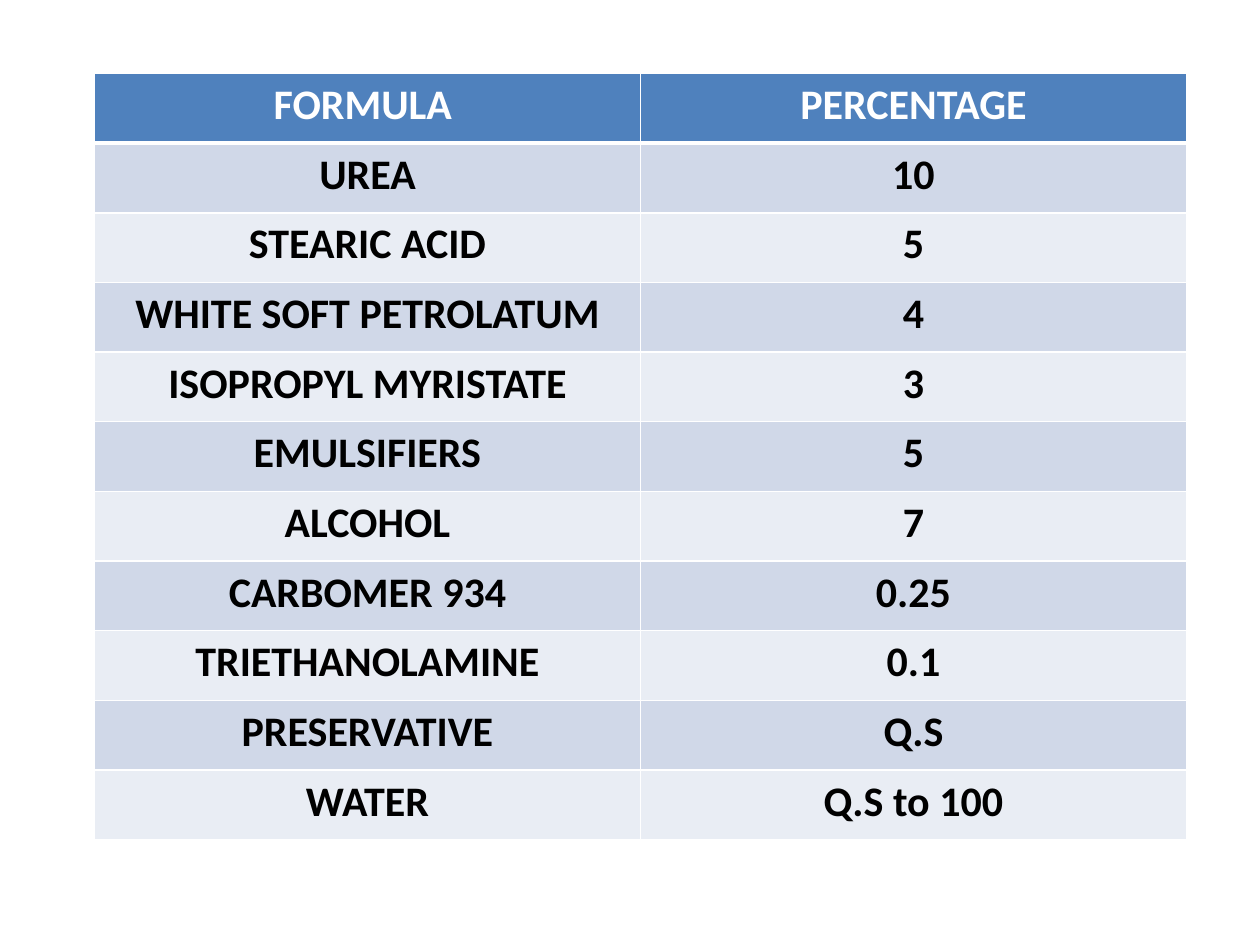
import dataclasses

import lxml.etree
import pptx
import pptx.dml.color
import pptx.enum.text
import pptx.oxml.ns
import pptx.util

Pt = pptx.util.Pt
WHITE = "FFFFFF"
THIN, THICK = 1, 3


@dataclasses.dataclass(frozen=True)
class Ingredient:
    formula: str
    percentage: str


@dataclasses.dataclass(frozen=True)
class RowStyle:
    fill: str
    text: str
    top: float = THIN
    bottom: float = THIN


HEADING = Ingredient("FORMULA ", "PERCENTAGE")
INGREDIENTS = [
    Ingredient("UREA", "10"),
    Ingredient("STEARIC ACID", "5"),
    Ingredient("WHITE SOFT PETROLATUM", "4"),
    Ingredient("ISOPROPYL MYRISTATE", "3"),
    Ingredient("EMULSIFIERS", "5"),
    Ingredient("ALCOHOL", "7"),
    Ingredient("CARBOMER 934", "0.25"),
    Ingredient("TRIETHANOLAMINE", "0.1"),
    Ingredient("PRESERVATIVE", "Q.S"),
    Ingredient("WATER", "Q.S to 100"),
]
BANDS = ["E9EDF4", "D0D8E8"]
FONT_FORMAT = {"name": "Calibri", "size": Pt(24), "bold": True}


def color(value: str) -> pptx.dml.color.RGBColor:
    return pptx.dml.color.RGBColor.from_string(value)


def row_style(index: int) -> RowStyle:
    if index == 0:
        return RowStyle("4F81BD", WHITE, bottom=THICK)
    return RowStyle(BANDS[index % 2], "000000", top=THICK if index == 1 else THIN)


def draw_border(cell, side: str, width: float) -> None:
    qn = pptx.oxml.ns.qn
    properties = cell._tc.get_or_add_tcPr()
    border = lxml.etree.SubElement(properties, qn(f"a:ln{side}"), w=str(Pt(width)))
    solid = lxml.etree.SubElement(border, qn("a:solidFill"))
    lxml.etree.SubElement(solid, qn("a:srgbClr"), val=WHITE)


def draw_cell(cell, wording: str, style: RowStyle) -> None:
    widths = {"L": THIN, "R": THIN, "T": style.top, "B": style.bottom}
    for side, width in widths.items():
        draw_border(cell, side, width)
    cell.fill.solid()
    cell.fill.fore_color.rgb = color(style.fill)
    paragraph = cell.text_frame.paragraphs[0]
    paragraph.alignment = pptx.enum.text.PP_ALIGN.CENTER
    run = paragraph.add_run()
    run.text = wording
    for attribute, value in FONT_FORMAT.items():
        setattr(run.font, attribute, value)
    run.font.color.rgb = color(style.text)


def draw_formula(slide, entries: list[Ingredient]) -> None:
    formula = slide.shapes.add_table(
        len(entries), 2, Pt(54), Pt(42), Pt(624), Pt(438)
    ).table
    for index, entry in enumerate(entries):
        for column, wording in enumerate(dataclasses.astuple(entry)):
            draw_cell(formula.cell(index, column), wording, row_style(index))


def main() -> None:
    presentation = pptx.Presentation()
    presentation.slide_width = Pt(720)
    presentation.slide_height = Pt(540)
    slide = presentation.slides.add_slide(presentation.slide_layouts[6])
    draw_formula(slide, [HEADING, *INGREDIENTS])
    presentation.save("out.pptx")


if __name__ == "__main__":
    main()
